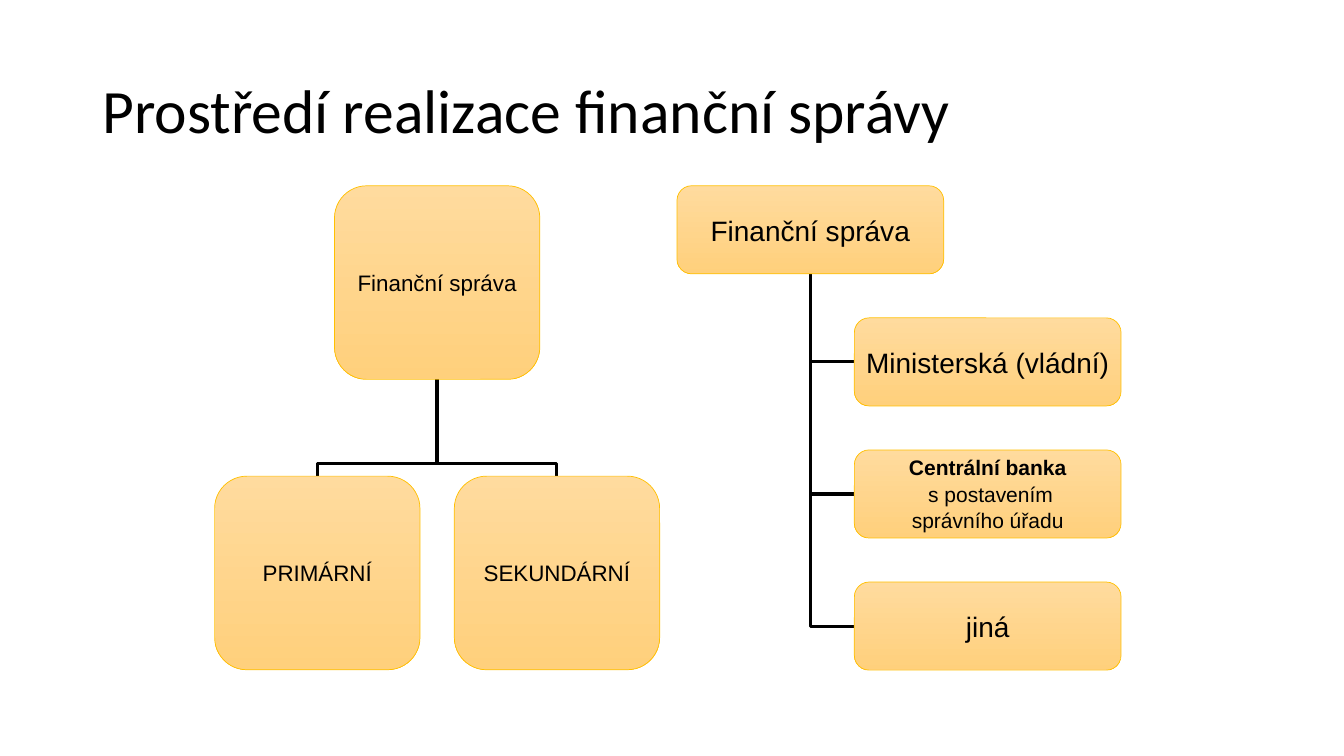
from lxml.etree import SubElement
from pptx import Presentation
from pptx.dml.color import RGBColor as RGB
from pptx.enum.shapes import MSO_CONNECTOR as CONN, MSO_SHAPE as SHAPE
from pptx.enum.text import MSO_ANCHOR as ANCHOR, MSO_AUTO_SIZE as AUTO, PP_ALIGN as ALIGN
from pptx.oxml.ns import qn
from pptx.util import Pt

# Content: each label is a list of paragraphs (text, size, bold)
TITLE = "Prostředí realizace finanční správy"
LEFT_ROOT = [("Finanční správa", 16, False)]
LEFT_CHILDREN = [[("PRIMÁRNÍ", 16, False)], [("SEKUNDÁRNÍ", 16, False)]]
RIGHT_ROOT = [("Finanční správa", 20, False)]
RIGHT_CHILDREN = [
    [("Ministerská (vládní)", 20, False)],
    [("Centrální banka", 15, True), (" s postavením", 15, False),
     (" správního úřadu ", 15, False)],
    [("jiná", 20, False)],
]
COLORS = {"text": "000000", "line": "000000", "border": "FFC000",
          "top": "FFDB9E", "bottom": "FFD07C"}

# Layout in points
TOP = 132.7
LEFT_X, LEFT_W, LEFT_H, LEFT_STEP, LEFT_DROP = 153.3, 146.7, 138.3, 171.2, 207.4
RIGHT_X, RIGHT_W, RIGHT_H = 483.6, 190.5, 62.9


def color(name):
    return RGB.from_string(COLORS[name])


def set_font(font, **values):
    for key, value in values.items():
        setattr(font, key, value)
    font.color.rgb = color("text")


def add_box(shapes, x, y, w, h, label):
    s = shapes.add_shape(SHAPE.ROUNDED_RECTANGLE, Pt(x), Pt(y), Pt(w), Pt(h))
    s.shadow.inherit = False
    s.fill.gradient()
    s.fill.gradient_angle = 270
    for stop, name, pos in zip(s.fill.gradient_stops, ("top", "bottom"), (0, 1)):
        stop.color.rgb = color(name)
        stop.position = pos
    s.line.color.rgb = color("border")
    s.line.width = Pt(0.5)
    tf = s.text_frame
    frame = {"word_wrap": False, "vertical_anchor": ANCHOR.MIDDLE, "margin_left": 0,
             "margin_right": 0, "margin_top": 0, "margin_bottom": 0}
    for key, value in frame.items():
        setattr(tf, key, value)
    for i, (text, size, bold) in enumerate(label):
        p = tf.add_paragraph() if i else tf.paragraphs[0]
        p.alignment = ALIGN.CENTER
        if i:
            p.space_before = Pt(1)
        r = p.add_run()
        r.text = text
        set_font(r.font, name="Arial", size=Pt(size), bold=bold)


def add_elbow(shapes, x, y, w, h, preset, degrees, flip=False, bend=None):
    """Elbow whose frame, before turning, is x, y, w, h."""
    c = shapes.add_connector(CONN.ELBOW, Pt(x), Pt(y), Pt(x + w), Pt(y + h))
    c.line.color.rgb = color("line")
    c.line.width = Pt(2.25)
    pr = c._element.spPr
    SubElement(pr, qn("a:effectLst"))
    xfrm = pr.find(qn("a:xfrm"))
    xfrm.set("rot", str(degrees * 60000))
    if flip:
        xfrm.set("flipH", "1")
    geom = pr.find(qn("a:prstGeom"))
    geom.set("prst", preset)
    if bend is not None:
        SubElement(geom.find(qn("a:avLst")), qn("a:gd"),
                   name="adj1", fmla=f"val {round(bend * 100000)}")


prs = Presentation()
prs.slide_width, prs.slide_height = Pt(960), Pt(540)
slide = prs.slides.add_slide(prs.slide_layouts[5])

# Title
title = slide.shapes.title
title.left, title.top, title.width, title.height = Pt(66), Pt(28.8), Pt(828), Pt(104.4)
tf = title.text_frame
tf.text = TITLE
tf.word_wrap = True
tf.auto_size = AUTO.NONE
tf.vertical_anchor = ANCHOR.MIDDLE
p = tf.paragraphs[0]
p.alignment = ALIGN.LEFT
p.line_spacing = 0.9
set_font(p.runs[0].font, name="Calibri", size=Pt(44))

# Left tree: root above two children
tree = slide.shapes.add_group_shape().shapes
root_x = LEFT_X + LEFT_STEP / 2
root_mid = root_x + LEFT_W / 2
reach, gap = LEFT_STEP / 2, LEFT_DROP - LEFT_H
mid_y = TOP + LEFT_H + gap / 2
for side, degrees in ((1, 90), (-1, 270)):
    mid_x = root_mid + side * reach / 2
    add_elbow(tree, mid_x - gap / 2, mid_y - reach / 2, gap, reach,
              "bentConnector3", degrees, flip=side > 0, bend=0.13)
add_box(tree, root_x, TOP, LEFT_W, LEFT_H, LEFT_ROOT)
for i, label in enumerate(LEFT_CHILDREN):
    add_box(tree, LEFT_X + i * LEFT_STEP, TOP + LEFT_DROP, LEFT_W, LEFT_H, label)

# Right tree: root with children hanging below, half a box height apart
tree = slide.shapes.add_group_shape().shapes
trunk_x, indent, step = RIGHT_X + RIGHT_W / 2, RIGHT_H / 2, RIGHT_H * 1.5
for n in range(len(RIGHT_CHILDREN), 0, -1):
    add_elbow(tree, trunk_x, TOP + RIGHT_H, indent, n * step - RIGHT_H / 2,
              "bentConnector2", 180)
add_box(tree, RIGHT_X, TOP, RIGHT_W, RIGHT_H, RIGHT_ROOT)
for n, label in enumerate(RIGHT_CHILDREN, 1):
    add_box(tree, trunk_x + indent, TOP + n * step, RIGHT_W, RIGHT_H, label)

prs.save("out.pptx")
